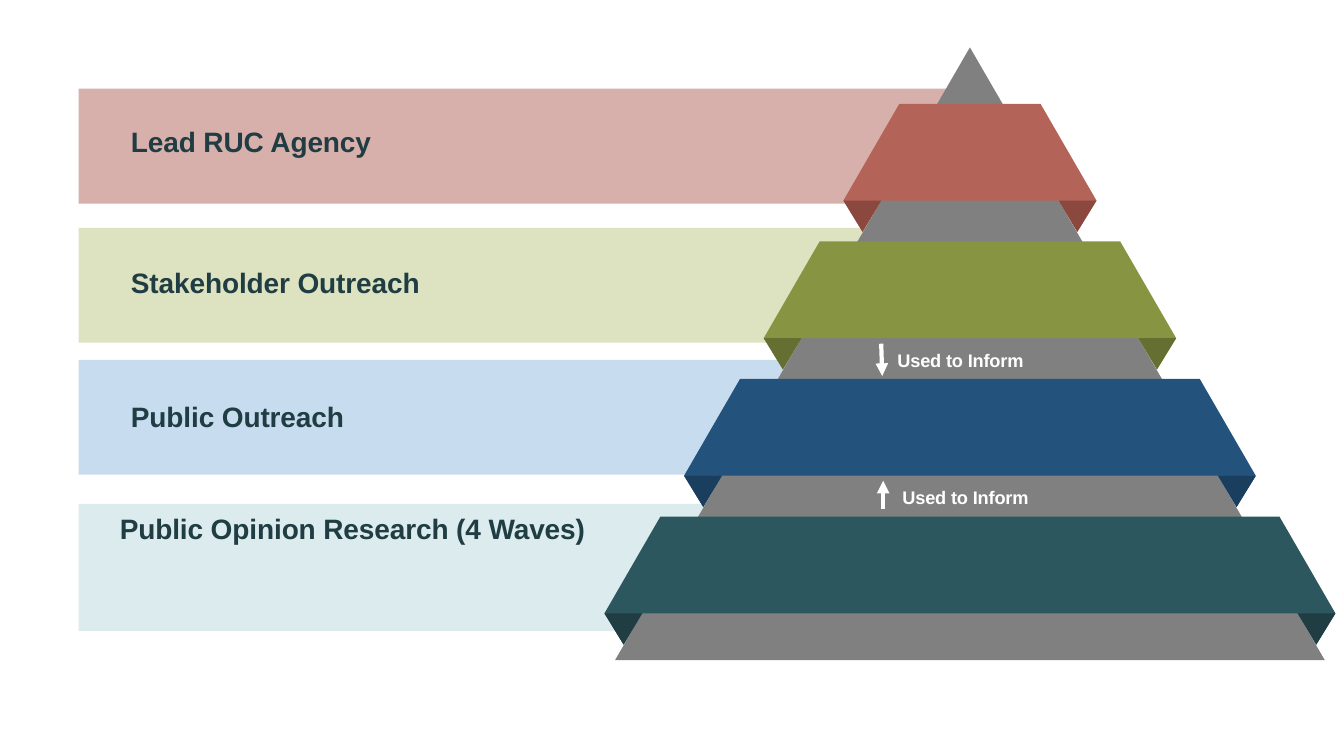
"""Build a four-tier outreach pyramid slide."""
from dataclasses import dataclass

from lxml import etree
from pptx import Presentation
from pptx.dml.color import RGBColor
from pptx.enum.shapes import MSO_CONNECTOR, MSO_SHAPE
from pptx.enum.text import MSO_ANCHOR, PP_ALIGN
from pptx.oxml.ns import qn
from pptx.shapes.base import BaseShape
from pptx.shapes.shapetree import SlideShapes
from pptx.util import Inches, Pt

RECT = MSO_SHAPE.RECTANGLE
LINE = MSO_CONNECTOR.STRAIGHT
TOP, BOTTOM = MSO_ANCHOR.TOP, MSO_ANCHOR.BOTTOM
LEFT, CENTER = PP_ALIGN.LEFT, PP_ALIGN.CENTER

COLORS = {
    "ink": "1F3D42", "white": "FFFFFF", "gray": "808080",
    "red": "B36358", "red fold": "8A483F", "red band": "B36358",
    "green": "879442", "green fold": "656F32", "green band": "BDC884",
    "blue": "23527C", "blue fold": "1A3E5D", "blue band": "92BBE0",
    "teal": "2C575E", "teal fold": "1F3D42", "teal band": "B9D9DE",
}
MID = 9.62
Box = tuple[float, float, float, float]
Point = tuple[float, float]


@dataclass
class Tier:
    """One pyramid level with its band and label."""
    color: str
    text: str
    band: Box
    label: Box


@dataclass
class Note:
    """A white caption with its arrow."""
    box: Box
    start: Point
    end: Point


@dataclass
class Style:
    """The look of a line of text."""
    color: str
    size: float
    space: float
    align: PP_ALIGN
    anchor: MSO_ANCHOR


HEAD = Style("ink", 20, 21.6, LEFT, BOTTOM)
SMALL = Style("white", 13, 18, CENTER, TOP)

TIERS = [
    Tier("red", "Lead RUC Agency", (0.78, 0.88, 9.07, 1.14), (1.2, 1.21, 7.42, 0.41)),
    Tier("green", "Stakeholder Outreach", (0.78, 2.26, 8.53, 1.14), (1.2, 2.61, 6.41, 0.41)),
    Tier("blue", "Public Outreach", (0.78, 3.57, 8.53, 1.14), (1.2, 3.94, 3.61, 0.41)),
    Tier("teal", "Public Opinion Research (4 Waves)", (0.78, 5, 11.17, 1.26),
         (1.09, 5.05, 7.56, 0.41)),
]
NOTES = [
    Note((8.65, 4.74, 1.85, 0.84), (8.76, 5.05), (8.76, 4.77)),
    Note((8.6, 3.38, 1.85, 0.84), (8.74, 3.41), (8.75, 3.73)),
]


def shade(name: str) -> RGBColor:
    """Look up a colour."""
    return RGBColor.from_string(COLORS[name])


def apply(item: object, values: dict[str, object]) -> None:
    """Set each attribute on the item."""
    for key, value in values.items():
        setattr(item, key, value)


def paint(shape: BaseShape, name: str) -> None:
    """Give a shape a flat fill without line or shadow."""
    shape.shadow.inherit = False
    shape.fill.solid()
    shape.fill.fore_color.rgb = shade(name)
    shape.line.fill.background()


def add_band(shapes: SlideShapes, tier: Tier) -> None:
    """Draw the half-clear strip behind a label."""
    band = shapes.add_shape(RECT, *map(Inches, tier.band))
    paint(band, f"{tier.color} band")
    tint = next(band.fill._xPr.iter(qn("a:srgbClr")))
    etree.SubElement(tint, qn("a:alpha"), val="50000")


def add_text(shapes: SlideShapes, box: Box, text: str, style: Style) -> None:
    """Write one line of bold text."""
    frame = shapes.add_textbox(*map(Inches, box)).text_frame
    apply(frame, {"word_wrap": True, "vertical_anchor": style.anchor})
    para = frame.paragraphs[0]
    apply(para, {"alignment": style.align, "line_spacing": Pt(style.space)})
    run = para.add_run()
    run.text = text
    apply(run.font, {"name": "Arial", "size": Pt(style.size), "bold": True})
    run.font.color.rgb = shade(style.color)
    run._r.get_or_add_rPr().set("spc", "-10")


def add_form(shapes: SlideShapes, points: list[Point], name: str) -> None:
    """Draw a filled closed outline."""
    start, *rest = [(Inches(x), Inches(y)) for x, y in points]
    pen = shapes.build_freeform(*start)
    pen.add_line_segments(rest, close=True)
    paint(pen.convert_to_shape(), name)


def add_tier(shapes: SlideShapes, index: int, tier: Tier) -> None:
    """Draw a pyramid level and its two folds."""
    top = 1.03 + 1.365 * index
    base, tip = top + 0.96, top + 1.27
    half = 1.255 + 0.79 * index
    side = [(half - 0.555, top), (half, base), (half - 0.19, tip), (half - 0.375, base)]
    left = [(MID - x, y) for x, y in side]
    right = [(MID + x, y) for x, y in side]
    add_form(shapes, left + right[::-1], tier.color)
    for edge in (left, right):
        add_form(shapes, edge[1:], f"{tier.color} fold")


def add_arrow(shapes: SlideShapes, note: Note) -> None:
    """Draw a white arrow."""
    arrow = shapes.add_connector(LINE, *map(Inches, note.start + note.end))
    arrow.line.width = Pt(3)
    arrow.line.color.rgb = shade("white")
    etree.SubElement(arrow.line._get_or_add_ln(), qn("a:tailEnd"), type="triangle")
    etree.SubElement(arrow._element.spPr, qn("a:effectLst"))


def main() -> None:
    """Build and save the slide."""
    deck = Presentation()
    apply(deck, {"slide_width": Inches(13.33), "slide_height": Inches(7.5)})
    shapes = deck.slides.add_slide(deck.slide_layouts[6]).shapes
    for tier in TIERS:
        add_band(shapes, tier)
    for tier in TIERS:
        add_text(shapes, tier.label, tier.text, HEAD)
    add_form(shapes, [(MID, 0.47), (MID - 3.52, 6.55), (MID + 3.52, 6.55)], "gray")
    for index, tier in enumerate(TIERS):
        add_tier(shapes, index, tier)
    for note in NOTES:
        add_text(shapes, note.box, "Used to Inform", SMALL)
        add_arrow(shapes, note)
    deck.save("out.pptx")


if __name__ == "__main__":
    main()
